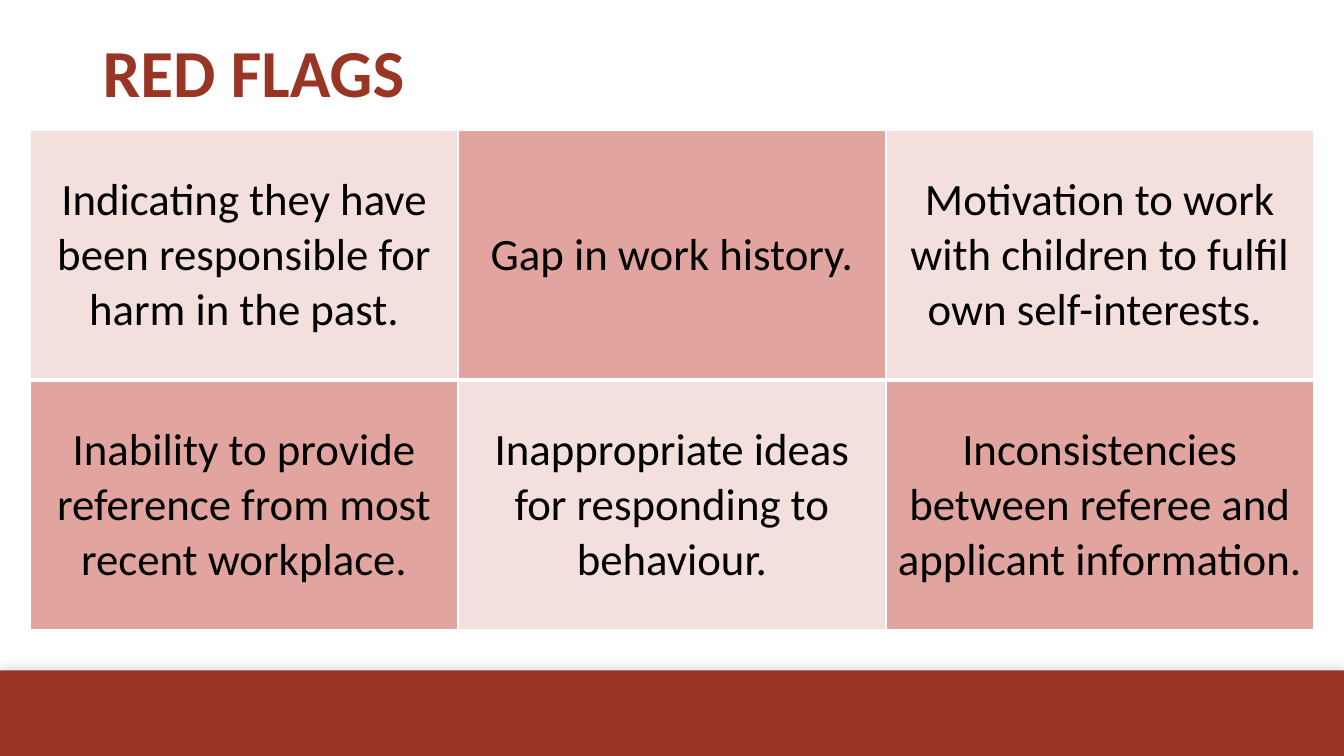
from lxml import etree
from pptx import Presentation
from pptx.dml.color import RGBColor
from pptx.enum.shapes import MSO_SHAPE as Preset
from pptx.enum.text import MSO_ANCHOR as Anchor, PP_ALIGN as Align
from pptx.oxml import parse_xml
from pptx.oxml.ns import nsdecls, qn
from pptx.util import Inches, Pt

WHITE = RGBColor(0xFF, 0xFF, 0xFF)
BLACK = RGBColor(0x00, 0x00, 0x00)
BRICK = RGBColor(0x99, 0x35, 0x25)
PALE_ROSE = RGBColor(0xF3, 0xE0, 0xDC)
ROSE = RGBColor(0xE1, 0xA4, 0x9E)
FONT = "Calibri"

RED_FLAGS = [
    ["Indicating they have been responsible for harm in the past.",
     "Gap in work history.",
     "Motivation to work with children to fulfil own self-interests. "],
    ["Inability to provide reference from most recent workplace.",
     "Inappropriate ideas for responding to behaviour.",
     "Inconsistencies between referee and applicant information."],
]


def add_run(paragraph, text, size, color, bold=False):
    run = paragraph.add_run()
    run.text = text
    run.font.name = FONT
    run.font.size = Pt(size)
    run.font.bold = bold
    run.font.color.rgb = color


def add_footer_band(slide):
    band = slide.shapes.add_shape(
        Preset.RECTANGLE, 0, Inches(6.65), Inches(13.33), Inches(0.85))
    band.fill.solid()
    band.fill.fore_color.rgb = BRICK
    band.line.fill.background()
    band.shadow.inherit = False
    effects = band.element.spPr.find(qn("a:effectLst"))
    effects.append(parse_xml(
        f'<a:outerShdw {nsdecls("a")} blurRad="{Pt(7)}" dist="{Pt(3)}" '
        f'dir="16200000" rotWithShape="0"><a:srgbClr val="{BLACK}">'
        '<a:alpha val="13000"/></a:srgbClr></a:outerShdw>'))


def add_title(slide, text):
    title = slide.shapes.add_textbox(
        Inches(0.92), Inches(0.03), Inches(11.5), Inches(1.45))
    frame = title.text_frame
    frame.word_wrap = True
    frame.vertical_anchor = Anchor.MIDDLE
    paragraph = frame.paragraphs[0]
    paragraph.line_spacing = 0.9
    add_run(paragraph, text, 48, BRICK, bold=True)


def set_borders(cell, top, bottom):
    """Draw white cell borders, 1 pt at the sides; widths are in points."""
    properties = cell._tc.get_or_add_tcPr()
    widths = {"lnL": 1, "lnR": 1, "lnT": top, "lnB": bottom}
    for position, (side, width) in enumerate(widths.items()):
        border = etree.Element(qn(f"a:{side}"), w=str(Pt(width)))
        fill = etree.SubElement(border, qn("a:solidFill"))
        etree.SubElement(fill, qn("a:srgbClr"), val=str(WHITE))
        properties.insert(position, border)


def add_flag_table(slide, flags):
    rows, columns = len(flags), len(flags[0])
    table = slide.shapes.add_table(
        rows, columns, Inches(0.3), Inches(1.29),
        Inches(12.73), Inches(4.96)).table
    table.first_row = table.horz_banding = False
    for r, row in enumerate(flags):
        for c, text in enumerate(row):
            cell = table.cell(r, c)
            cell.fill.solid()
            cell.fill.fore_color.rgb = ROSE if (r + c) % 2 else PALE_ROSE
            cell.vertical_anchor = Anchor.MIDDLE
            set_borders(cell, top=3 if r else 1, bottom=1 if r else 3)
            paragraph = cell.text_frame.paragraphs[0]
            paragraph.alignment = Align.CENTER
            add_run(paragraph, text, 32, BLACK)


def main():
    deck = Presentation()
    deck.slide_width, deck.slide_height = Inches(13.33), Inches(7.5)
    slide = deck.slides.add_slide(deck.slide_layouts[6])
    slide.background.fill.solid()
    slide.background.fill.fore_color.rgb = WHITE
    add_footer_band(slide)
    add_title(slide, "RED FLAGS")
    add_flag_table(slide, RED_FLAGS)
    deck.save("out.pptx")


if __name__ == "__main__":
    main()
